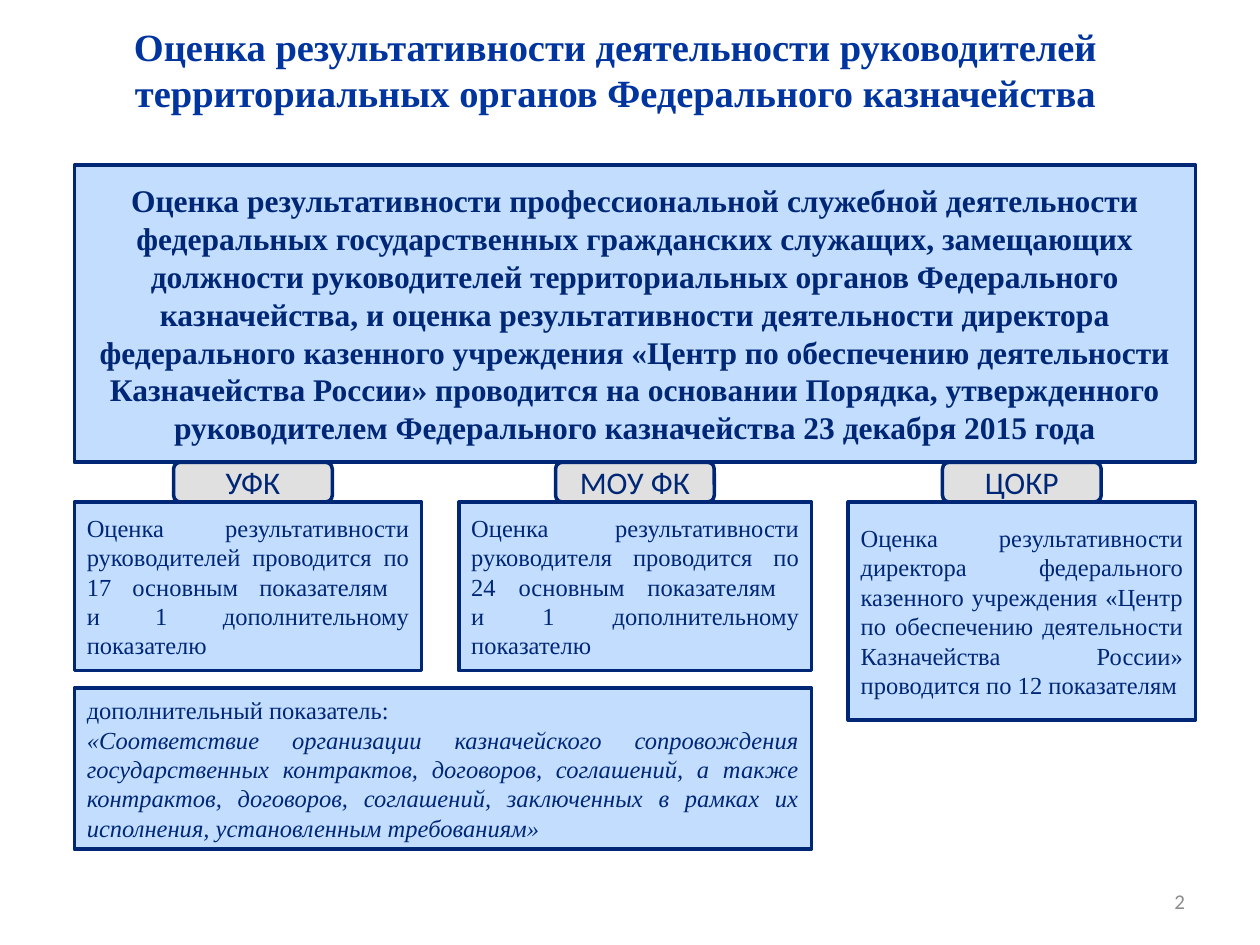
from copy import deepcopy
from dataclasses import dataclass

from pptx import Presentation
from pptx.dml.color import RGBColor
from pptx.enum.shapes import MSO_SHAPE
from pptx.enum.text import MSO_ANCHOR, PP_ALIGN
from pptx.oxml.ns import qn
from pptx.util import Cm, Pt

RECTANGLE, ROUNDED = MSO_SHAPE.RECTANGLE, MSO_SHAPE.ROUNDED_RECTANGLE
TOP, MIDDLE = MSO_ANCHOR.TOP, MSO_ANCHOR.MIDDLE
CENTER, JUSTIFY, RIGHT = PP_ALIGN.CENTER, PP_ALIGN.JUSTIFY, PP_ALIGN.RIGHT

NAVY = RGBColor(0x00, 0x27, 0x76)
BLUE = RGBColor(0x00, 0x34, 0x9E)
PALE_BLUE = RGBColor(0xC3, 0xDD, 0xFF)
LIGHT_GRAY = RGBColor(0xE0, 0xE0, 0xE0)
GRAY = RGBColor(0x8C, 0x8C, 0x8C)

SERIF, SANS = "Times New Roman", "Calibri"
TITLE = {"name": SERIF, "size": Pt(22), "bold": True}
LEAD = {"name": SERIF, "size": Pt(18), "bold": True}
BODY = {"name": SERIF, "size": Pt(14)}
QUOTE = {**BODY, "italic": True}
TAB = {"name": SANS, "size": Pt(18)}
NUMBER = {"name": SANS, "size": Pt(12)}

LEFT, WIDTH = 1.5, 22.6
LEAD_TOP, LEAD_HEIGHT = 3.33, 5.99
TAB_TOP, TAB_WIDTH, TAB_HEIGHT = LEAD_TOP + LEAD_HEIGHT, 3.2, 0.8
COLUMN_TOP = TAB_TOP + TAB_HEIGHT


@dataclass
class Area:
    left: float
    top: float
    width: float
    height: float

    def lengths(self) -> list[Cm]:
        return [Cm(value) for value in (self.left, self.top, self.width, self.height)]


@dataclass
class Line:
    text: str
    style: dict


@dataclass
class Column:
    label: str
    tab_left: float
    left: float
    width: float
    height: float
    text: str


COLUMNS = [
    Column("УФК", 3.5, LEFT, 7.0, 3.4,
           "Оценка результативности руководителей проводится по 17 основным "
           "показателям \nи 1 дополнительному показателю"),
    Column("МОУ ФК", 11.2, 9.25, 7.11, 3.4,
           "Оценка результативности руководителя проводится по 24 основным "
           "показателям \nи 1 дополнительному показателю"),
    Column("ЦОКР", 19.0, 17.1, 7.0, 4.4,
           "Оценка результативности директора федерального казенного учреждения "
           "«Центр по обеспечению деятельности Казначейства России» проводится "
           "по 12 показателям"),
]


def write(box, lines: list[Line], color: RGBColor, align, anchor) -> None:
    frame = box.text_frame
    frame.word_wrap = True
    frame.vertical_anchor = anchor
    for index, line in enumerate(lines):
        para = frame.add_paragraph() if index else frame.paragraphs[0]
        para.alignment = align
        para.text = line.text.replace("\n", "\v")
        for span in para.runs:
            span.font.color.rgb = color
            for name, value in line.style.items():
                setattr(span.font, name, value)
        for line_break in para._p.findall(qn("a:br")):
            line_break.append(deepcopy(para.runs[0]._r.rPr))


def add_label(page, area: Area, line: Line, color: RGBColor, align, anchor) -> None:
    write(page.shapes.add_textbox(*area.lengths()), [line], color, align, anchor)


def add_panel(page, area: Area, lines: list[Line], align,
              kind=RECTANGLE, fill: RGBColor = PALE_BLUE) -> None:
    box = page.shapes.add_shape(kind, *area.lengths())
    box.shadow.inherit = False
    box.fill.solid()
    box.fill.fore_color.rgb = fill
    box.line.color.rgb = NAVY
    box.line.width = Pt(2)
    write(box, lines, NAVY, align, MIDDLE)


def main() -> None:
    deck = Presentation()
    deck.slide_width, deck.slide_height = Cm(25.4), Cm(19.05)
    page = deck.slides.add_slide(deck.slide_layouts[6])

    add_label(page, Area(0.71, 0.33, 23.39, 2.13),
              Line("Оценка результативности деятельности руководителей "
                   "территориальных органов Федерального казначейства", TITLE),
              BLUE, CENTER, TOP)
    add_panel(page, Area(LEFT, LEAD_TOP, WIDTH, LEAD_HEIGHT), [
        Line("Оценка результативности профессиональной служебной деятельности "
             "федеральных государственных гражданских служащих, замещающих должности "
             "руководителей территориальных органов Федерального казначейства, и оценка "
             "результативности деятельности директора федерального казенного учреждения "
             "«Центр по обеспечению деятельности Казначейства России» проводится на "
             "основании Порядка, утвержденного руководителем Федерального казначейства "
             "23 декабря 2015 года", LEAD)], CENTER)

    for column in COLUMNS:
        add_panel(page, Area(column.left, COLUMN_TOP, column.width, column.height),
                  [Line(column.text, BODY)], JUSTIFY)
        add_panel(page, Area(column.tab_left, TAB_TOP, TAB_WIDTH, TAB_HEIGHT),
                  [Line(column.label, TAB)], CENTER, ROUNDED, LIGHT_GRAY)

    middle = COLUMNS[1]
    add_panel(page, Area(LEFT, 13.87, middle.left + middle.width - LEFT, 3.25), [
        Line("дополнительный показатель:", BODY),
        Line("«Соответствие организации казначейского сопровождения государственных "
             "контрактов, договоров, соглашений, а также контрактов, договоров, "
             "соглашений, заключенных в рамках их исполнения, установленным "
             "требованиям»", QUOTE)], JUSTIFY)
    add_label(page, Area(20.3, 17.65, 3.84, 1.02), Line("2", NUMBER), GRAY, RIGHT, MIDDLE)

    deck.save("out.pptx")


if __name__ == "__main__":
    main()
